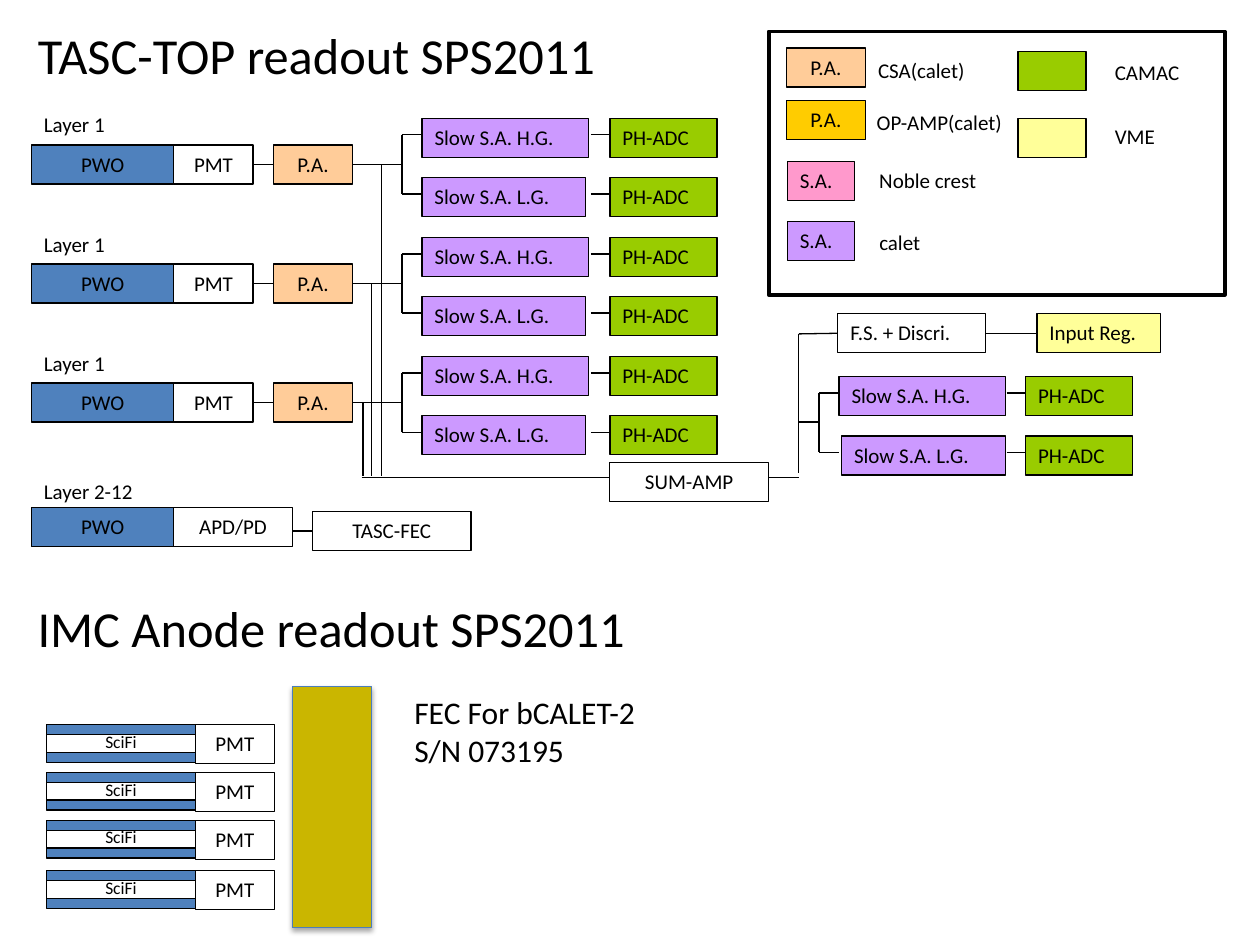
from lxml import etree
from pptx import Presentation
from pptx import util as u
from pptx.dml.color import RGBColor
from pptx.enum import shapes as kinds, text
from pptx.oxml import ns

COLORS = {
    "black": "000000", "blue": "4F81BD", "peach": "FFCC99", "orange": "FFCC00",
    "pink": "FF99CC", "violet": "CC99FF", "green": "99CC00", "yellow": "FFFF99",
    "gold": "CAB600", "edge": "4B7EBC",
}
FONT = "Calibri"
BOX_HEIGHT = 0.31
LEFT_SIDE, RIGHT_SIDE = 1, 3
CENTER = text.PP_ALIGN.CENTER


def color(name):
    return RGBColor.from_string(COLORS[name])


def write(frame, words, size=12, align=text.PP_ALIGN.LEFT):
    frame.text = words
    for para in frame.paragraphs:
        para.alignment = align
        para.font.name = FONT
        para.font.size = u.Pt(size)
        para.font.color.rgb = color("black")


def add_box(shapes, at, words="", fill=None, centered=False, size=12, edge="black", weight=0.75):
    """Outlined rectangle; left-aligned labels do not wrap."""
    box = shapes.add_shape(kinds.MSO_SHAPE.RECTANGLE, *map(u.Inches, at))
    box.shadow.inherit = False
    if fill:
        box.fill.solid()
        box.fill.fore_color.rgb = color(fill)
    else:
        box.fill.background()
    box.line.color.rgb = color(edge)
    box.line.width = u.Pt(weight)
    if words:
        frame = box.text_frame
        frame.vertical_anchor = text.MSO_ANCHOR.TOP
        frame.word_wrap = centered
        if not centered:
            frame.auto_size = text.MSO_AUTO_SIZE.SHAPE_TO_FIT_TEXT
        write(frame, words, size, CENTER if centered else text.PP_ALIGN.LEFT)
    return box


def add_label(shapes, at, words, size=12, wrap=False):
    box = shapes.add_textbox(*map(u.Inches, at))
    box.text_frame.word_wrap = wrap
    box.text_frame.auto_size = text.MSO_AUTO_SIZE.SHAPE_TO_FIT_TEXT
    write(box.text_frame, words, size)
    return box


def format_heading(box, top, words):
    box.left, box.top, box.width, box.height = map(u.Inches, (0.2, top, 6.97, 0.54))
    frame = box.text_frame
    frame.word_wrap = True
    frame.auto_size = text.MSO_AUTO_SIZE.NONE
    frame.vertical_anchor = text.MSO_ANCHOR.MIDDLE
    write(frame, words, 28.8)


def add_wire(shapes, x1, y1, x2, y2, start=None, end=None):
    """Straight wire, joined to the right of start and the left of end if given."""
    wire = shapes.add_connector(kinds.MSO_CONNECTOR.STRAIGHT, *map(u.Inches, (x1, y1, x2, y2)))
    wire.line.color.rgb = color("black")
    wire.line.width = u.Pt(0.75)
    etree.SubElement(wire._element.spPr, ns.qn("a:effectLst"))
    if start is not None:
        wire.begin_connect(start, RIGHT_SIDE)
    if end is not None:
        wire.end_connect(end, LEFT_SIDE)


def add_slow_pair(shapes, fork, top, lefts, adc_left):
    """Fork into high- and low-gain shapers, each read by an ADC."""
    gains = (("H.G.", 1.32, lefts[0]), ("L.G.", 1.3, lefts[1]))
    for row, (gain, width, left) in enumerate(gains):
        y = top + 0.47 * row
        add_box(shapes, (left, y, width, BOX_HEIGHT), f"Slow S.A. {gain}", "violet")
        add_box(shapes, (adc_left, y, 0.85, BOX_HEIGHT), "PH-ADC", "green")
        add_wire(shapes, fork, y + 0.13, lefts[0], y + 0.13)
        add_wire(shapes, adc_left - 0.15, y + 0.13, adc_left, y + 0.13)
    add_wire(shapes, fork, top + 0.13, fork, top + 0.6)


def add_crystal(shapes, top, layer, layer_width, sensor, sensor_width, label_gap):
    add_label(shapes, (0.25, top - label_gap, layer_width, 0.3), layer)
    add_box(shapes, (0.25, top, 1.13, BOX_HEIGHT), "PWO", "blue", True)
    return add_box(shapes, (1.38, top, sensor_width, BOX_HEIGHT), sensor, centered=True)


def add_channel(shapes, top, bus):
    tube = add_crystal(shapes, top, "Layer 1", 0.76, "PMT", 0.63, 0.31)
    preamp = add_box(shapes, (2.17, top, 0.63, BOX_HEIGHT), "P.A.", "peach", True)
    middle = top + BOX_HEIGHT / 2
    add_wire(shapes, 2.01, middle, 2.17, middle, tube, preamp)
    add_wire(shapes, 2.8, middle, 3.19, middle, preamp)
    add_slow_pair(shapes, 3.19, top - 0.21, (3.35, 3.35), 4.84)
    add_wire(shapes, bus, middle, bus, 3.78)


def add_sum_branch(shapes):
    add_box(shapes, (4.84, 3.67, 1.26, BOX_HEIGHT), "SUM-AMP", centered=True)
    add_wire(shapes, 2.87, 3.79, 4.84, 3.79)
    add_wire(shapes, 6.1, 3.79, 6.34, 3.79)
    add_wire(shapes, 6.34, 2.65, 6.34, 3.75)
    add_wire(shapes, 6.34, 3.35, 6.5, 3.35)
    add_slow_pair(shapes, 6.5, 2.99, (6.66, 6.68), 8.14)
    discriminator = add_box(shapes, (6.65, 2.49, 1.17, BOX_HEIGHT), "F.S. + Discri.")
    register = add_box(shapes, (8.23, 2.49, 0.98, BOX_HEIGHT), "Input Reg.", "yellow")
    add_wire(shapes, 6.34, 2.65, 6.65, 2.65, end=discriminator)
    add_wire(shapes, 7.83, 2.65, 8.23, 2.65, discriminator, register)


def add_legend(shapes):
    add_box(shapes, (6.1, 0.25, 3.62, 2.09), weight=2.25)
    # swatch left, top, width, text, fill, centred; label left, top, width, text
    entries = (
        (6.24, 0.38, 0.63, "P.A.", "peach", True, 6.87, 0.41, 1.01, "CSA(calet)"),
        (6.24, 0.8, 0.63, "P.A.", "orange", True, 6.86, 0.82, 1.32, "OP-AMP(calet)"),
        (6.25, 1.28, 0.53, "S.A.", "pink", False, 6.88, 1.28, 1.04, "Noble crest"),
        (6.25, 1.76, 0.53, "S.A.", "violet", False, 6.88, 1.77, 0.55, "calet"),
        (8.08, 0.41, 0.54, "", "green", False, 8.75, 0.42, 0.8, "CAMAC"),
        (8.08, 0.94, 0.54, "", "yellow", False, 8.75, 0.93, 0.56, "VME"),
    )
    for left, top, width, mark, fill, centered, label_left, label_top, label_width, words in entries:
        group = shapes.add_group_shape().shapes
        add_box(group, (left, top, width, BOX_HEIGHT), mark, fill, centered)
        add_label(group, (label_left, label_top, label_width, 0.3), words)


def add_fiber(shapes, top):
    group = shapes.add_group_shape().shapes
    add_box(group, (0.37, top, 1.18, 0.28), "SciFi", centered=True, size=10)
    for offset in (0, 0.22):
        add_box(group, (0.37, top + offset, 1.18, 0.08), fill="blue")
    add_box(group, (1.55, top, 0.63, BOX_HEIGHT), "PMT", centered=True)


def add_soft_shadow(box):
    effects = box._element.spPr.find(ns.qn("a:effectLst"))
    shadow = etree.SubElement(effects, ns.qn("a:outerShdw"), blurRad=str(u.Pt(3.1)),
                              dist=str(u.Pt(1.8)), dir="5400000", rotWithShape="0")
    shade = etree.SubElement(shadow, ns.qn("a:srgbClr"), val=COLORS["black"])
    etree.SubElement(shade, ns.qn("a:alpha"), val="35000")


def main():
    deck = Presentation()
    deck.slide_width, deck.slide_height = u.Inches(10), u.Inches(7.5)
    page = deck.slides.add_slide(deck.slide_layouts[5])
    shapes = page.shapes

    # Calorimeter readout
    format_heading(shapes.title, 0.16, "TASC-TOP readout SPS2011")
    for row, bus in enumerate((3.03, 2.95, 2.88)):
        add_channel(shapes, 1.15 + 0.945 * row, bus)
    add_sum_branch(shapes)
    add_crystal(shapes, 4.03, "Layer 2-12", 0.99, "APD/PD", 0.94, 0.28)
    front_end = add_box(shapes, (2.48, 4.06, 1.26, BOX_HEIGHT), "TASC-FEC", centered=True)
    add_wire(shapes, 2.32, 4.215, 2.48, 4.215, end=front_end)
    add_legend(shapes)

    # Anode readout
    heading = shapes.add_textbox(0, 0, 0, 0)
    format_heading(heading, 4.71, "IMC Anode readout SPS2011")
    for top in (5.75, 6.13, 6.51, 6.91):
        add_fiber(shapes, top)
    card = add_box(shapes, (2.32, 5.45, 0.63, 1.91), fill="gold", edge="edge")
    add_soft_shadow(card)
    add_label(shapes, (3.19, 5.45, 3.83, 1.01), "FEC For bCALET-2\nS/N 073195", 18, True)

    deck.save("out.pptx")


if __name__ == "__main__":
    main()
